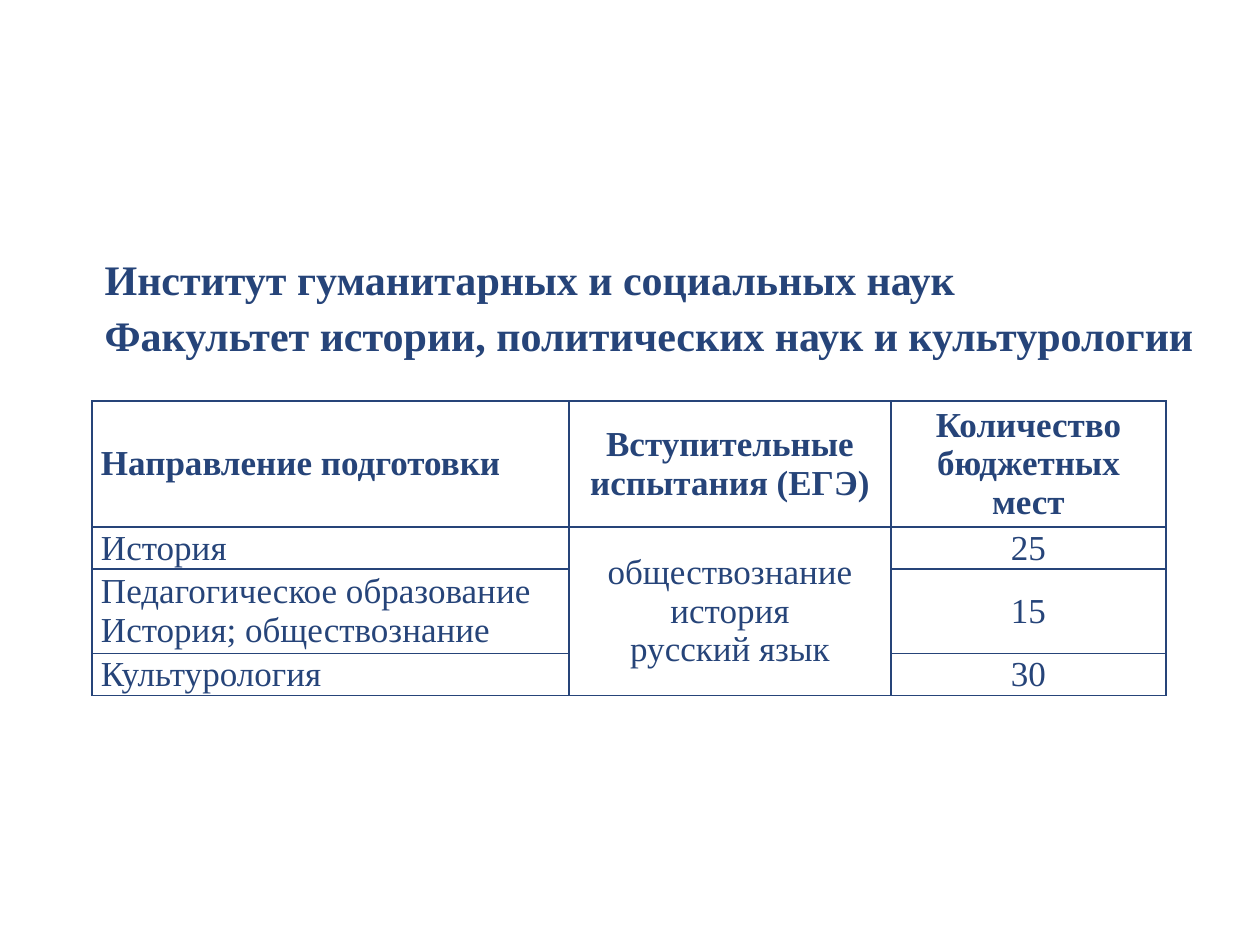
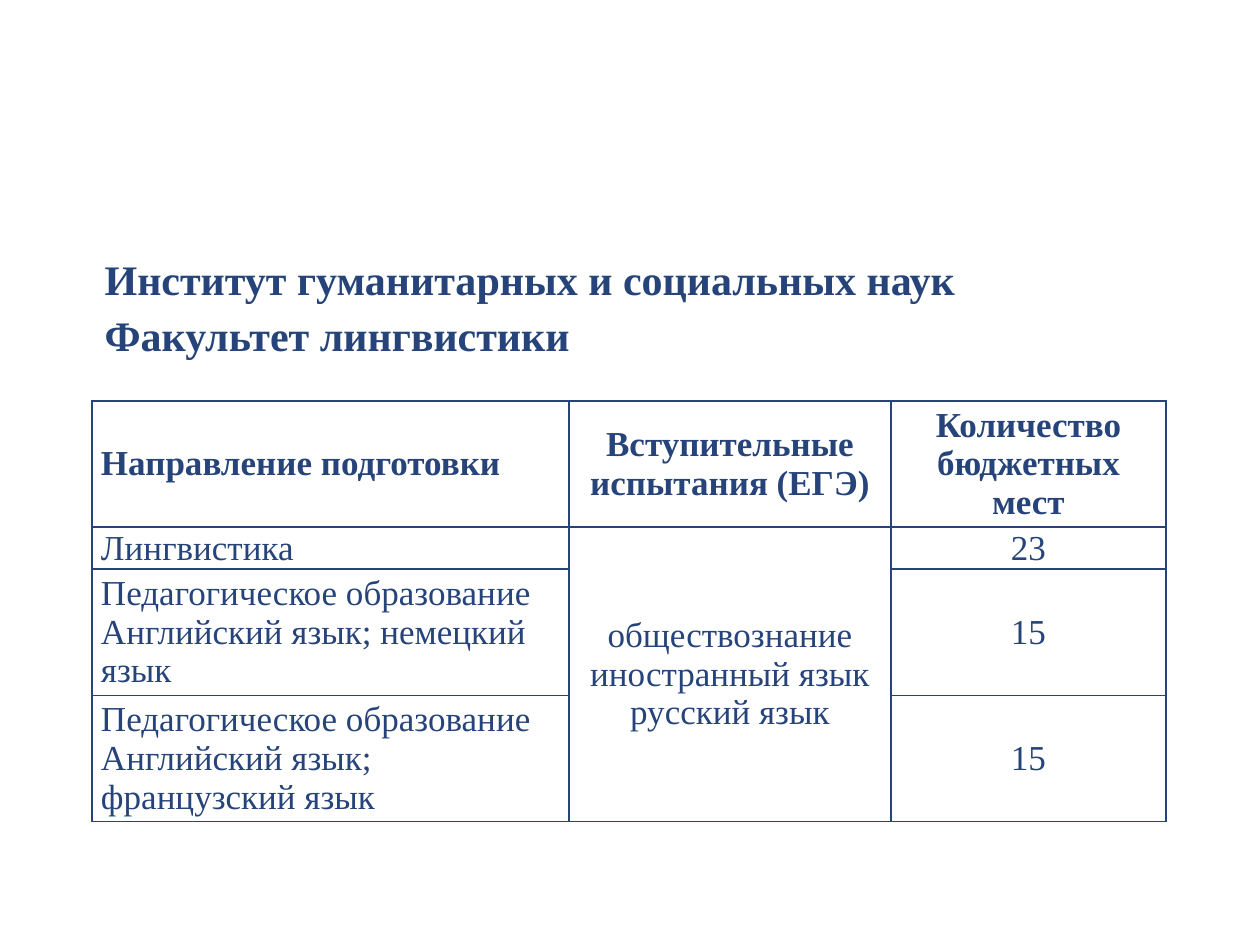
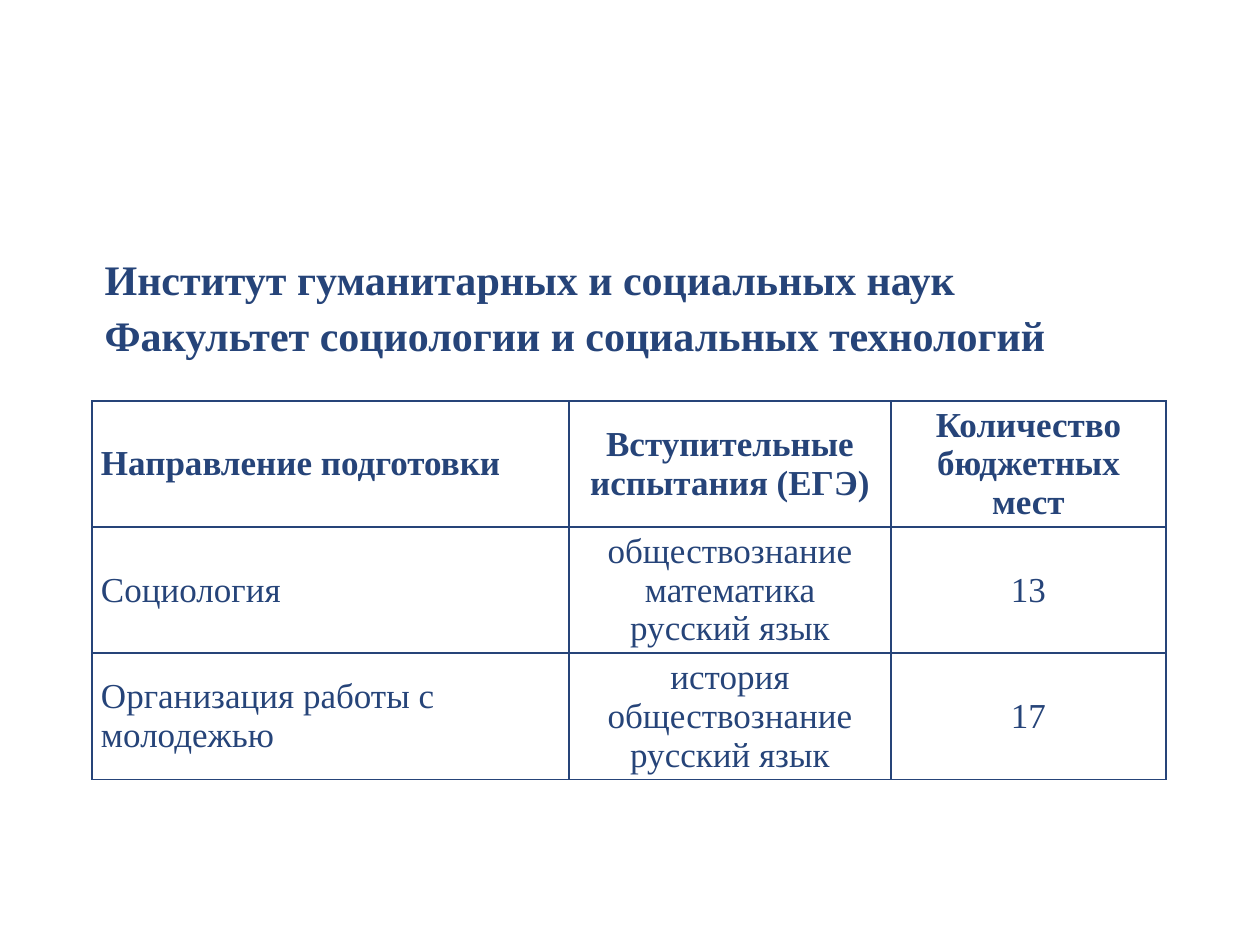
from lxml import etree
from pptx import Presentation
from pptx import util as u
from pptx.dml.color import RGBColor
from pptx.enum import text
from pptx.oxml import ns

PX = u.Inches(1) / 126
FONT = "Times New Roman"
NAVY = "264479"
WHITE = "FFFFFF"
LEFT = 92
TITLE_TOP, TITLE_HEIGHT = 242, 126
TABLE_TOP = 401
COLUMN_WIDTHS = [477, 322, 275]
LINE_HEIGHT = 42
CELL_INSET = 9

INSTITUTE = "Институт гуманитарных и социальных наук"
HEADER = (3, "Направление подготовки", "Вступительные испытания (ЕГЭ)",
          "Количество бюджетных мест")

# Faculty, title width, rows of (lines, programme, exams, places);
# exams of None continue the cell above
FACULTIES = [
    ("Факультет истории, политических наук и культурологии", 1126, [
        (1, "История", "обществознание\nистория\nрусский язык", "25"),
        (2, "Педагогическое образование\nИстория; обществознание", None, "15"),
        (1, "Культурология", None, "30"),
    ]),
    ("Факультет лингвистики", 885, [
        (1, "Лингвистика", "обществознание\nиностранный язык\nрусский язык", "23"),
        (3, "Педагогическое образование\nАнглийский язык; немецкий язык", None, "15"),
        (3, "Педагогическое образование\nАнглийский язык; французский язык", None, "15"),
    ]),
    ("Факультет социологии и социальных технологий", 977, [
        (3, "Социология", "обществознание\nматематика\nрусский язык", "13"),
        (3, "Организация работы с молодежью", "история\nобществознание\nрусский язык", "17"),
    ]),
]


def px(length):
    return u.Emu(round(length * PX))


def format_text(text_frame, size, bold, alignment):
    for paragraph in text_frame.paragraphs:
        paragraph.alignment = alignment
        for run in paragraph.runs:
            run.font.name = FONT
            run.font.size = u.Pt(size)
            run.font.bold = bold
            run.font.color.rgb = RGBColor.from_string(NAVY)


presentation = Presentation()
presentation.slide_width = px(1260)
presentation.slide_height = px(945)

for faculty, title_width, programmes in FACULTIES:
    slide = presentation.slides.add_slide(presentation.slide_layouts[5])

    # Title: institute and faculty
    title = slide.shapes.title
    title.left, title.top = px(LEFT), px(TITLE_TOP)
    title.width, title.height = px(title_width), px(TITLE_HEIGHT)
    title_frame = title.text_frame
    title_frame.text = f"{INSTITUTE}\n{faculty}"
    title_frame.word_wrap = False
    title_frame.auto_size = text.MSO_AUTO_SIZE.SHAPE_TO_FIT_TEXT
    title_frame.vertical_anchor = text.MSO_ANCHOR.TOP
    format_text(title_frame, 24, True, text.PP_ALIGN.LEFT)
    for paragraph in title_frame.paragraphs:
        paragraph.line_spacing = u.Pt(32)

    # Table of programmes
    rows = [HEADER] + programmes
    table_height = LINE_HEIGHT * sum(row[0] for row in rows)
    table = slide.shapes.add_table(
        len(rows), len(COLUMN_WIDTHS), px(LEFT), px(TABLE_TOP),
        px(sum(COLUMN_WIDTHS)), px(table_height)).table
    table.horz_banding = False
    for column, width in zip(table.columns, COLUMN_WIDTHS):
        column.width = px(width)

    for row_index, (lines, *values) in enumerate(rows):
        table.rows[row_index].height = px(LINE_HEIGHT * lines)
        for column_index, value in enumerate(values):
            cell = table.cell(row_index, column_index)
            cell.vertical_anchor = text.MSO_ANCHOR.MIDDLE
            cell.margin_left = cell.margin_right = px(CELL_INSET)
            cell.margin_top = cell.margin_bottom = 0
            if value:
                cell.text_frame.text = value
            alignment = text.PP_ALIGN.CENTER if column_index else text.PP_ALIGN.LEFT
            format_text(cell.text_frame, 20, row_index == 0, alignment)

            # Cell borders, then fill
            properties = cell._tc.get_or_add_tcPr()
            for side in ("a:lnL", "a:lnR", "a:lnT", "a:lnB"):
                line = etree.SubElement(properties, ns.qn(side), w=str(u.Pt(1)))
                solid = etree.SubElement(line, ns.qn("a:solidFill"))
                etree.SubElement(solid, ns.qn("a:srgbClr"), val=NAVY)
            cell.fill.solid()
            cell.fill.fore_color.rgb = RGBColor.from_string(WHITE)

    # Exams shared by all programmes
    if programmes[-1][2] is None:
        table.cell(1, 1).merge(table.cell(len(programmes), 1))

presentation.save("out.pptx")
